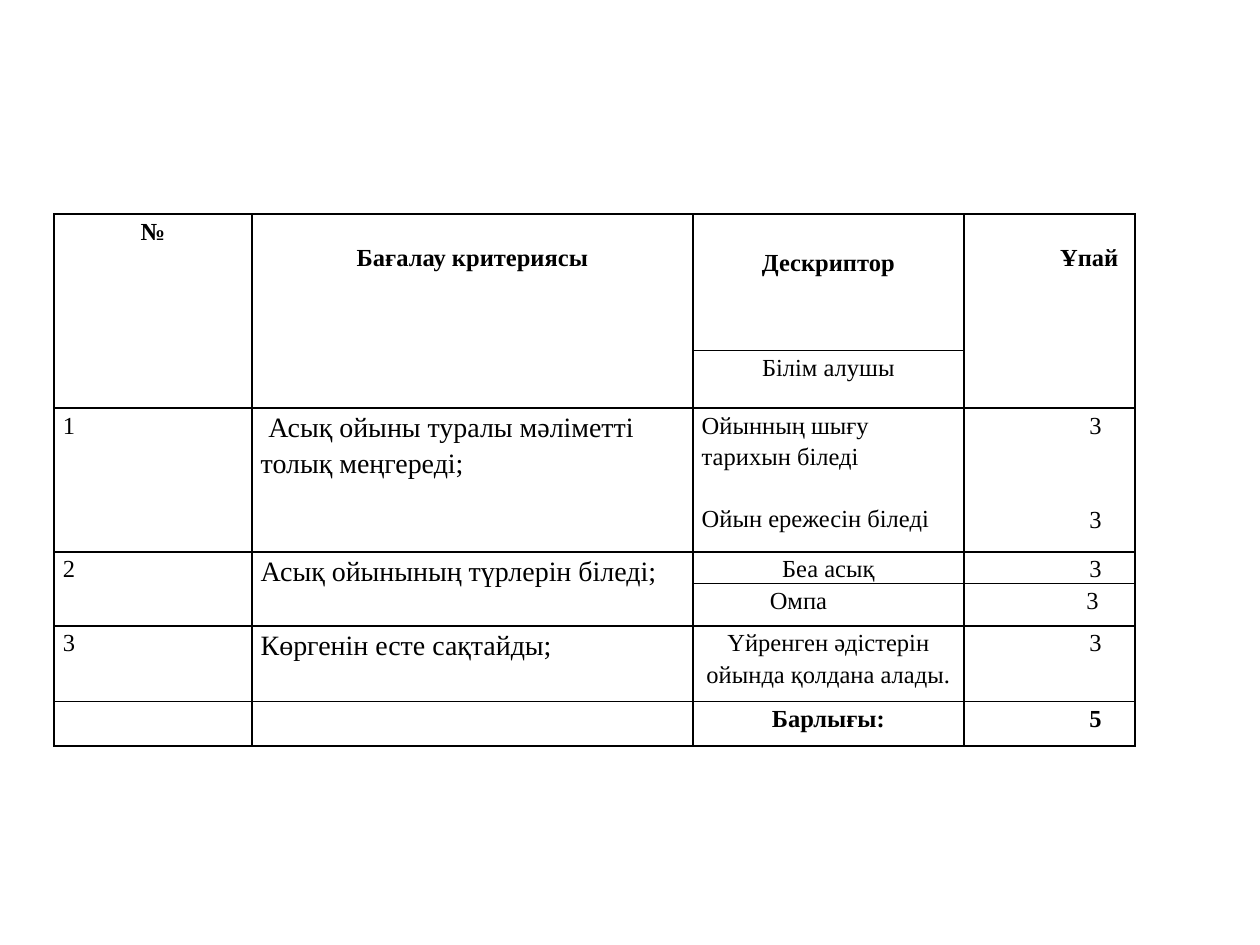
import pptx
import pptx.util
import pptx.dml.color
import pptx.enum.text
import pptx.oxml.ns
import lxml.etree

COLORS = {"ink": "000000", "paper": "FFFFFF"}
FONT = "Times New Roman"
COLUMN_WIDTHS = [1.57, 3.5, 2.15, 1.36]
ROW_HEIGHTS = [1.08, 0.46, 1.14, 0.25, 0.34, 0.6, 0.35]
TABLE_LEFT, TABLE_TOP = 0.43, 1.7
CENTER = pptx.enum.text.PP_ALIGN.CENTER
LEFT = pptx.enum.text.PP_ALIGN.LEFT
SCORE_INDENT = 0.73
BODY_SIZE, CRITERION_SIZE = 14, 16


def rgb(name):
    return pptx.dml.color.RGBColor.from_string(COLORS[name])


def border_cell(cell):
    """Draw a thin line on all four sides of a cell."""
    properties = cell._tc.get_or_add_tcPr()
    tag = pptx.oxml.ns.qn
    for position, side in enumerate(("a:lnL", "a:lnR", "a:lnT", "a:lnB")):
        line = lxml.etree.Element(tag(side), w=str(pptx.util.Pt(1)))
        fill = lxml.etree.SubElement(line, tag("a:solidFill"))
        lxml.etree.SubElement(fill, tag("a:srgbClr"), val=COLORS["ink"])
        properties.insert(position, line)


def format_cell(cell):
    cell.margin_left = cell.margin_right = pptx.util.Inches(0.07)
    cell.margin_top = cell.margin_bottom = 0
    cell.fill.solid()
    cell.fill.fore_color.rgb = rgb("paper")
    border_cell(cell)


def write_cell(cell, *lines, size=BODY_SIZE, bold=False, align=LEFT,
               indent=0, first_line=0, top=0, gap=0):
    """Write one paragraph per line; gap is the space between them."""
    cell.margin_top = pptx.util.Inches(top)
    for number, line in enumerate(lines):
        frame = cell.text_frame
        paragraph = frame.add_paragraph() if number else frame.paragraphs[0]
        paragraph.alignment = align
        paragraph.line_spacing = 1.15
        paragraph.space_before = pptx.util.Pt(gap if number else 0)
        properties = paragraph._p.get_or_add_pPr()
        properties.set("marL", str(pptx.util.Inches(indent)))
        properties.set("indent", str(pptx.util.Inches(first_line)))
        run = paragraph.add_run()
        run.text = line
        run.font.name = FONT
        run.font.size = pptx.util.Pt(size)
        run.font.bold = bold
        run.font.color.rgb = rgb("ink")


def write_score(cell, *scores, **options):
    write_cell(cell, *scores, align=CENTER, indent=SCORE_INDENT, **options)


def add_grid(slide):
    frame = slide.shapes.add_table(
        len(ROW_HEIGHTS), len(COLUMN_WIDTHS),
        *map(pptx.util.Inches, (TABLE_LEFT, TABLE_TOP,
                                sum(COLUMN_WIDTHS), sum(ROW_HEIGHTS))))
    table = frame.table
    table.first_row = table.horz_banding = False
    for column, width in zip(table.columns, COLUMN_WIDTHS):
        column.width = pptx.util.Inches(width)
    for row, height in zip(table.rows, ROW_HEIGHTS):
        row.height = pptx.util.Inches(height)
        for cell in row.cells:
            format_cell(cell)
    # Cells that run over two rows: (first row, column)
    for row, column in ((0, 0), (0, 1), (0, 3), (3, 0), (3, 1)):
        table.cell(row, column).merge(table.cell(row + 1, column))
    return table


def fill_header(table):
    heading = {"bold": True, "align": CENTER}
    write_cell(table.cell(0, 0), "№", **heading)
    write_cell(table.cell(0, 1), "Бағалау критериясы", top=0.21, **heading)
    write_cell(table.cell(0, 2), "Дескриптор", top=0.25, **heading)
    write_cell(table.cell(0, 3), "Ұпай ", top=0.21, indent=0.68, **heading)
    write_cell(table.cell(1, 2), "Білім алушы", align=CENTER)


def fill_criteria(table):
    # Number and criterion: row, text, first-line indent
    criteria = [(2, "Асық ойыны туралы мәліметті толық меңгереді;", 0.06),
                (3, "Асық ойынының түрлерін біледі;", 0),
                (5, "Көргенін есте сақтайды;", 0)]
    for number, (row, criterion, first_line) in enumerate(criteria, 1):
        write_cell(table.cell(row, 0), str(number))
        write_cell(table.cell(row, 1), criterion, size=CRITERION_SIZE,
                   first_line=first_line)


def fill_descriptors(table):
    write_cell(table.cell(2, 2), "Ойынның шығу тарихын біледі",
               "Ойын ережесін біледі", gap=18)
    write_score(table.cell(2, 3), "3", "3", gap=36)
    write_cell(table.cell(3, 2), "Беа асық", align=CENTER)
    write_score(table.cell(3, 3), "3")
    write_cell(table.cell(4, 2), "Омпа", indent=0.54)
    write_score(table.cell(4, 3), "3 ")
    write_cell(table.cell(5, 2), "Үйренген әдістерін ойында қолдана алады.",
               align=CENTER)
    write_score(table.cell(5, 3), "3")
    # Total
    write_cell(table.cell(6, 2), "Барлығы:", bold=True, align=CENTER)
    write_score(table.cell(6, 3), "5", bold=True)


def main():
    deck = pptx.Presentation()
    deck.slide_width = pptx.util.Inches(10)
    deck.slide_height = pptx.util.Inches(7.5)
    slide = deck.slides.add_slide(deck.slide_layouts[6])
    table = add_grid(slide)
    fill_header(table)
    fill_criteria(table)
    fill_descriptors(table)
    deck.save("out.pptx")


if __name__ == "__main__":
    main()
